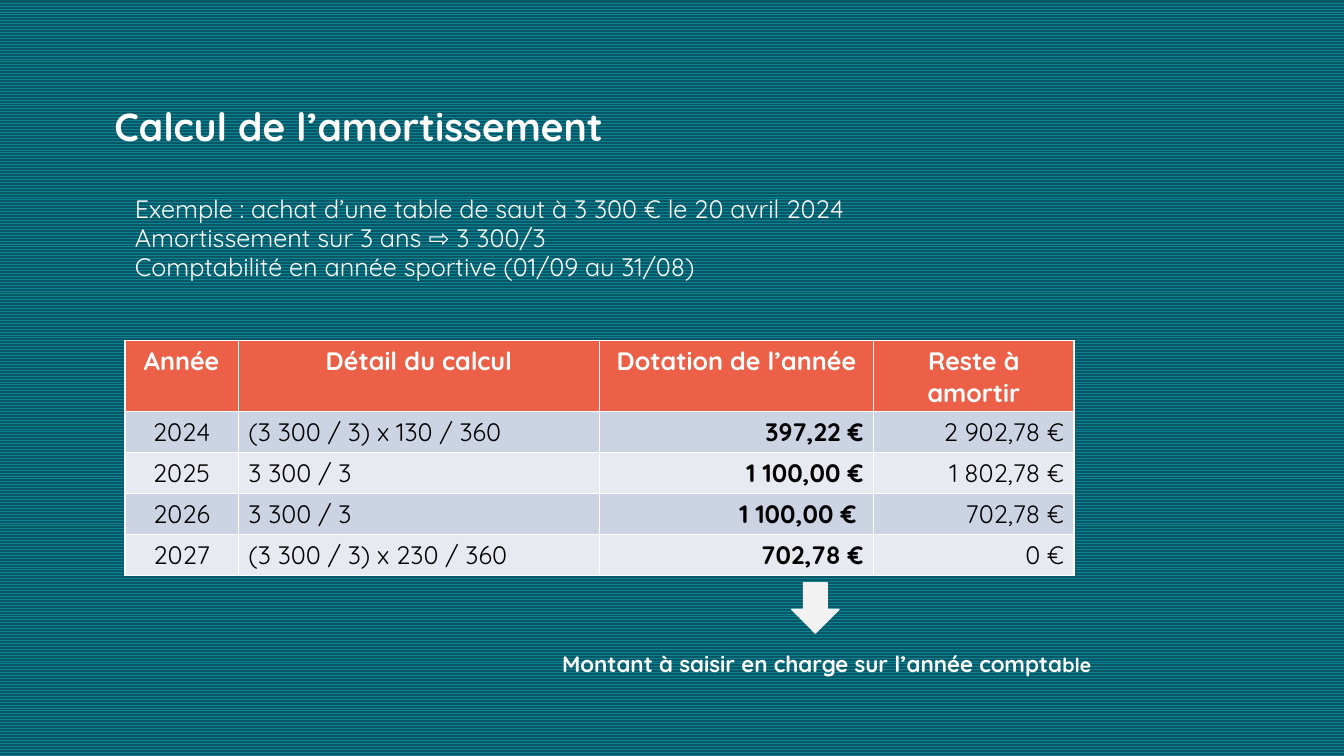
from pptx import Presentation
from pptx.dml.color import RGBColor
from pptx.enum.dml import MSO_PATTERN
from pptx.enum.shapes import MSO_SHAPE
from pptx.enum.text import MSO_ANCHOR as ANCHOR, PP_ALIGN as ALIGN
from pptx.util import Emu, Pt

FONT = "Quicksand"
WHITE, BLACK = "FFFFFF", "000000"
ARROW_GREY, HEADER_ORANGE = "F2F2F2", "EB6047"
BANDS = ("CCD3E2", "E7EAF1")

COLUMN_WIDTHS = (108, 344, 261, 191)
HEADER_HEIGHT, ROW_HEIGHT = 68, 39
HEADINGS = ("Année", "Détail du calcul", "Dotation de l’année", "Reste à amortir")
YEARS = (
    ("2024", "(3 300 / 3) x 130 / 360", "397,22 €", "2 902,78 €"),
    ("2025", "3 300 / 3", "1 100,00 €", "1 802,78 €"),
    ("2026", "3 300 / 3", "1 100,00 € ", "702,78 €"),
    ("2027", "(3 300 / 3) x 230 / 360", "702,78 €", "0 €"),
)
YEAR_ALIGNS = (ALIGN.CENTER, ALIGN.LEFT, ALIGN.RIGHT, ALIGN.RIGHT)
EXAMPLE = (
    "Exemple : achat d’une table de saut à 3 300 € le 20 avril 2024",
    "Amortissement sur 3 ans ⇨ 3 300/3",
    "Comptabilité en année sportive (01/09 au 31/08)",
)


def px(length):
    return Emu(length * 9525)


def color(hex_string):
    return RGBColor.from_string(hex_string)


def add_run(paragraph, text, size, hex_color=WHITE, bold=False):
    run = paragraph.add_run()
    run.text = text
    for name, value in {"name": FONT, "size": Pt(size), "bold": bold}.items():
        setattr(run.font, name, value)
    run.font.color.rgb = color(hex_color)


def add_frame(slide, box, **settings):
    frame = slide.shapes.add_textbox(*map(px, box)).text_frame
    for name, value in {"word_wrap": True, **settings}.items():
        setattr(frame, name, value)
    return frame


def add_background(slide):
    fill = slide.background.fill
    fill.patterned()
    fill.pattern = MSO_PATTERN.ZIG_ZAG
    fill.fore_color.rgb = color("0D8295")
    fill.back_color.rgb = color("085764")


def add_title(slide, box):
    sides = ("left", "top", "right", "bottom")
    frame = add_frame(slide, box, **{f"margin_{side}": 0 for side in sides})
    heading = frame.paragraphs[0]
    heading.line_spacing = 1.5
    add_run(heading, "Calcul de l’amortissement", 28, bold=True)


def add_example(slide, box):
    frame = add_frame(slide, box)
    for number, sentence in enumerate(EXAMPLE):
        line = frame.add_paragraph() if number else frame.paragraphs[0]
        line.line_spacing = 0.96
        add_run(line, sentence, 18)


def fill_cell(cell, text, fill, align, hex_color, bold):
    cell.fill.solid()
    cell.fill.fore_color.rgb = color(fill)
    paragraph = cell.text_frame.paragraphs[0]
    paragraph.alignment = align
    add_run(paragraph, text, 18, hex_color, bold)


def add_schedule(slide, left, top):
    """Add the depreciation table, one row a year."""
    heights = [HEADER_HEIGHT] + [ROW_HEIGHT] * len(YEARS)
    box = (left, top, sum(COLUMN_WIDTHS), sum(heights))
    schedule = slide.shapes.add_table(
        len(heights), len(COLUMN_WIDTHS), *map(px, box)).table
    for column, width in zip(schedule.columns, COLUMN_WIDTHS):
        column.width = px(width)
    for row, height in zip(schedule.rows, heights):
        row.height = px(height)
    for col, heading in enumerate(HEADINGS):
        fill_cell(schedule.cell(0, col), heading, HEADER_ORANGE,
                  ALIGN.CENTER, WHITE, True)
    for row, year in enumerate(YEARS):
        for col, (text, align) in enumerate(zip(year, YEAR_ALIGNS)):
            fill_cell(schedule.cell(row + 1, col), text, BANDS[row % 2],
                      align, BLACK, col == 2)


def add_arrow(slide, box):
    arrow = slide.shapes.add_shape(MSO_SHAPE.DOWN_ARROW, *map(px, box))
    arrow.shadow.inherit = False
    arrow.fill.solid()
    arrow.fill.fore_color.rgb = color(ARROW_GREY)
    arrow.line.color.rgb = color(ARROW_GREY)
    arrow.line.width = Pt(1)


def add_charge_note(slide, box):
    frame = add_frame(slide, box, vertical_anchor=ANCHOR.BOTTOM,
                      margin_bottom=px(10))
    note = frame.paragraphs[0]
    add_run(note, "Montant à saisir en charge sur l’année compta", 16, bold=True)
    add_run(note, "ble", 14, bold=True)


def main():
    deck = Presentation()
    deck.slide_width, deck.slide_height = px(1280), px(720)
    slide = deck.slides.add_slide(deck.slide_layouts[6])
    add_background(slide)
    add_title(slide, (109, 75, 1052, 60))
    add_example(slide, (119, 181, 999, 213))
    add_schedule(slide, 119, 324)
    add_charge_note(slide, (526, 587, 545, 68))
    add_arrow(slide, (754, 555, 45, 48))
    deck.save("out.pptx")


if __name__ == "__main__":
    main()
